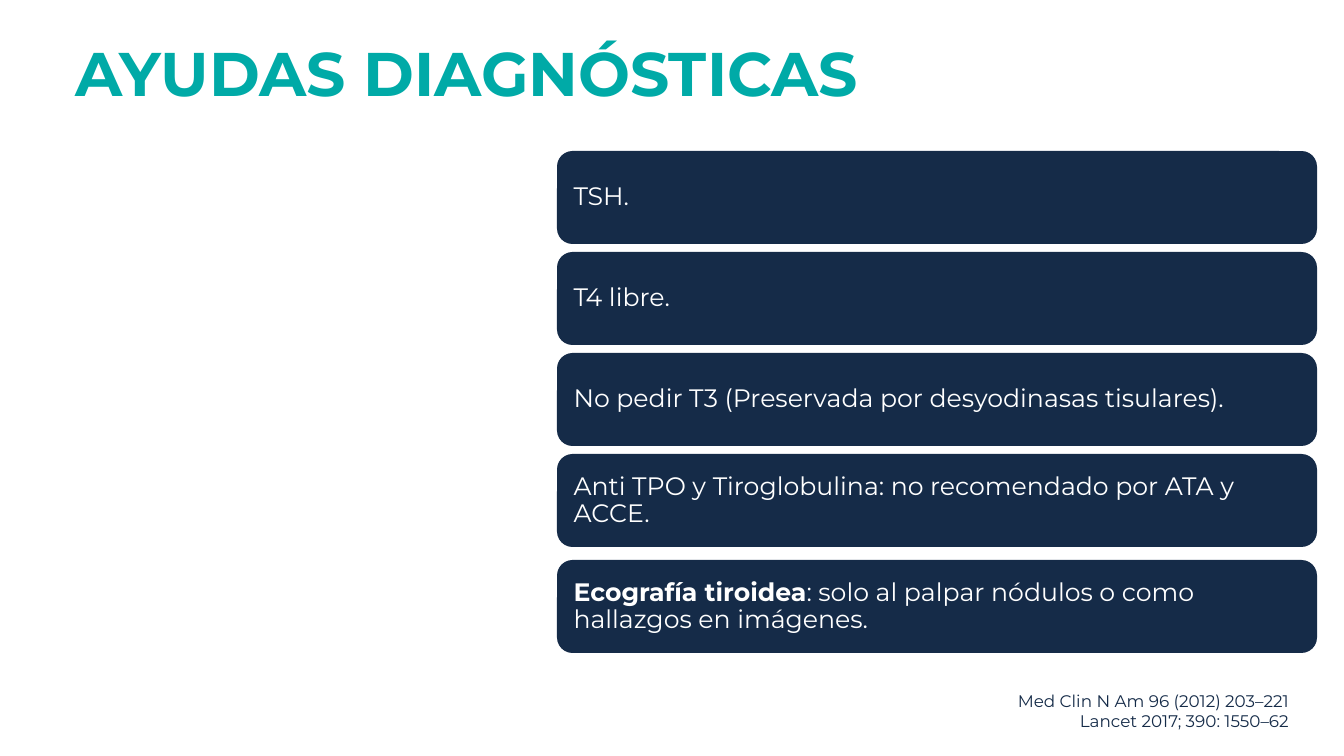
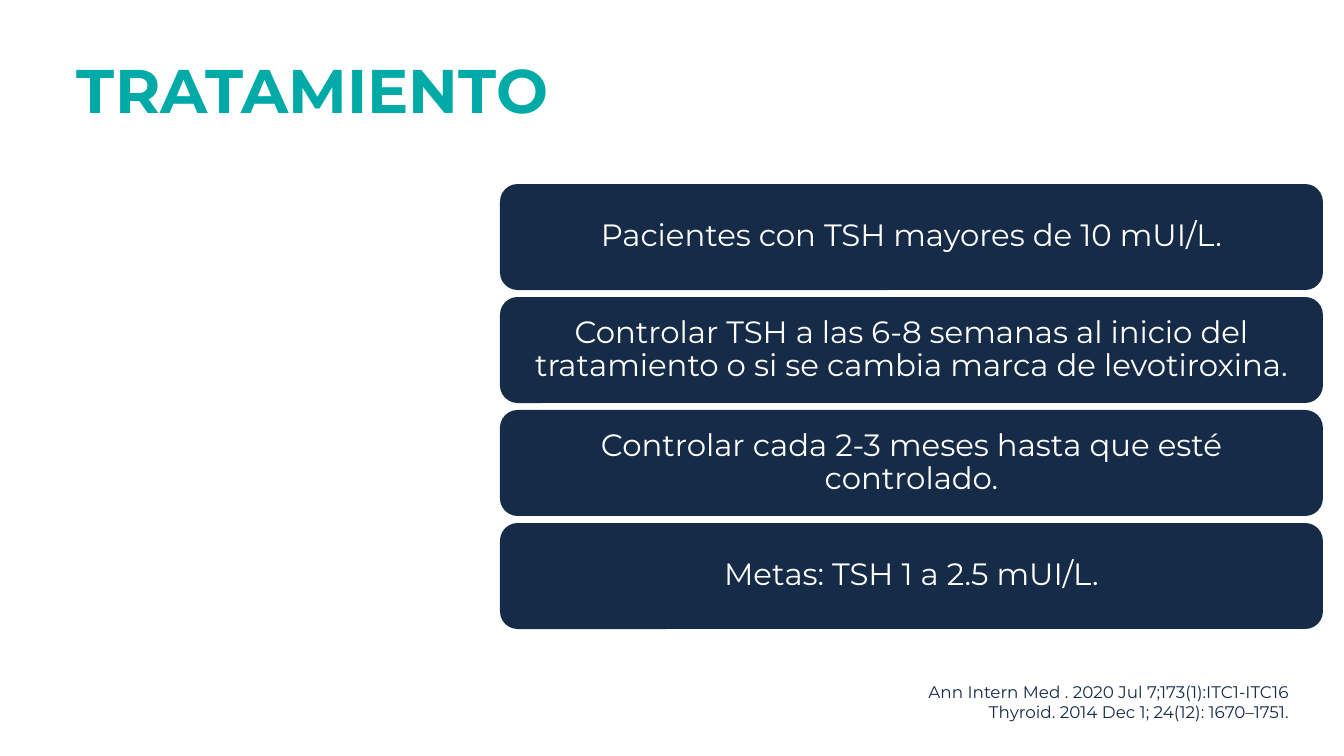
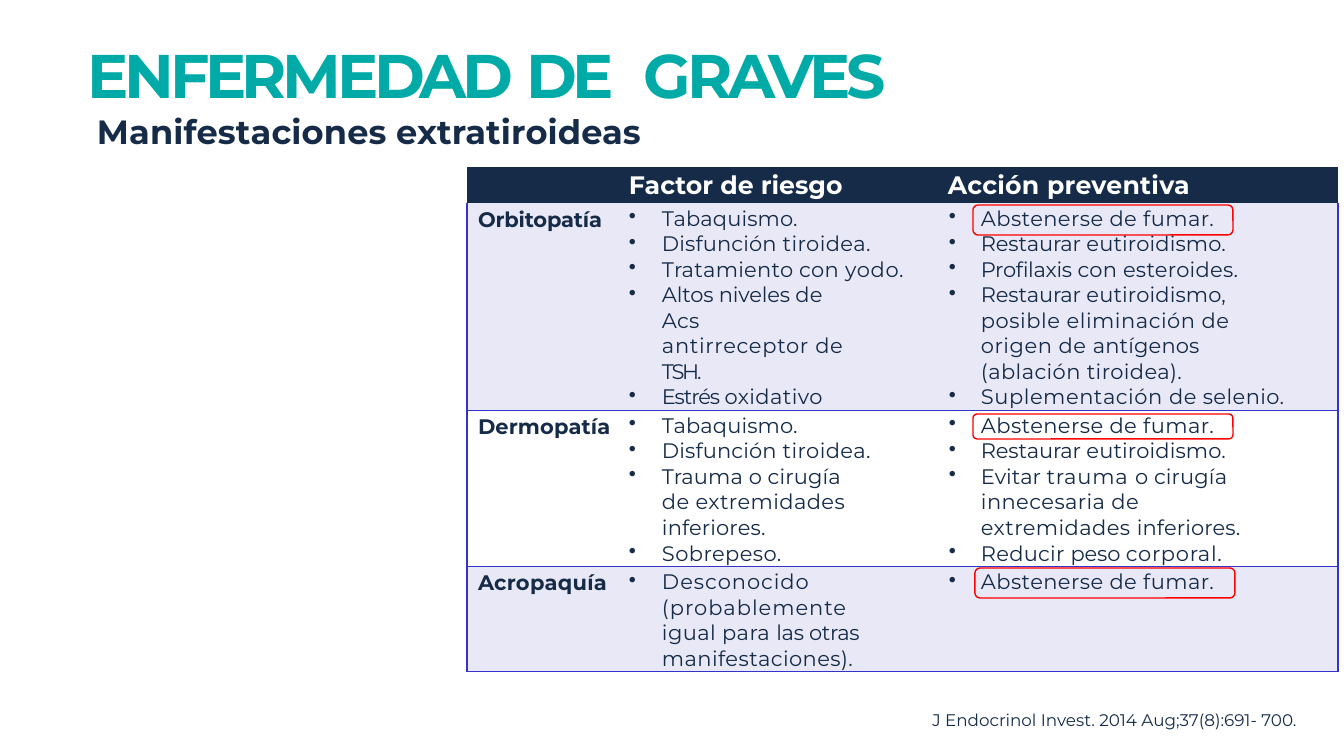
import copy

from pptx import Presentation
from pptx import util as u
from pptx.dml.color import RGBColor
from pptx.enum import shapes, text
from pptx.oxml import ns
from lxml import etree

EMU_PER_PX = 914400 / 100.8
FONT = "Montserrat"
TEAL = RGBColor(0x00, 0xAA, 0xA7)
NAVY = RGBColor(0x15, 0x2B, 0x48)
WHITE = RGBColor(0xFF, 0xFF, 0xFF)
LAVENDER = RGBColor(0xE8, 0xE8, 0xF6)
BLUE = RGBColor(0x33, 0x33, 0xCC)
RED = RGBColor(0xFF, 0x00, 0x00)
LEFT, CENTER, RIGHT = text.PP_ALIGN.LEFT, text.PP_ALIGN.CENTER, text.PP_ALIGN.RIGHT
NO_TABLE_STYLE = "{2D5ABB26-0587-4C30-8999-92F81FD0307C}"

HEADERS = [
    ("Factor de riesgo", 16, 0),
    ("Acción preventiva", 22, 0.2),
]
QUIT_SMOKING = [("Abstenerse de fumar.", 0.3)]
TOBACCO = [("Tabaquismo.", 0.1)]
DYSFUNCTION = [("Disfunción ", 0.1), ("tiroidea.", 0.3)]
EUTHYROIDISM = [("Restaurar ", -0.1), ("eutiroidismo.", 0.1)]
DISEASES = [
    ("Orbitopatía", -0.1, [
        TOBACCO,
        DYSFUNCTION,
        [("Tratamiento con ", 0.2), ("yodo.", 0.5)],
        [("Altos niveles ", -0.1), ("de\vAcs\v", 0.2),
         ("antirreceptor de\v", 0.5), ("TSH.", -1.6)],
        [("Estrés ", -0.8), ("oxidativo", 0.3)],
    ], [
        QUIT_SMOKING,
        EUTHYROIDISM,
        [("Profilaxis ", -0.2), ("con esteroides.", 0.2)],
        [("Restaurar ", -0.1), ("eutiroidismo,\v", 0.1),
         ("posible eliminación de\vorigen de ", 0.4),
         ("antígenos\v", 0.1), ("(ablación tiroidea).", 0.3)],
        [("Suplementación ", 0.4), ("de selenio.", 0.3)],
    ]),
    ("Dermopatía", 0.1, [
        TOBACCO,
        DYSFUNCTION,
        [("Trauma o cirugía\v", 0.1), ("de extremidades\v", 0.3),
         ("inferiores.", 0.1)],
        [("Sobrepeso.", 0.3)],
    ], [
        QUIT_SMOKING,
        EUTHYROIDISM,
        [("Evitar ", 0), ("trauma ", 0.6), ("o cirugía\v", 0.1),
         ("innecesaria de\vextremidades ", 0.3), ("inferiores.", 0.1)],
        [("Reducir ", 0.2), ("peso ", -0.1), ("corporal.", 0.5)],
    ]),
    ("Acropaquía", 0.2, [
        [("Desconocido\v(probablemente\v", 0.7), ("igual para ", 0.3),
         ("las otras\v", -0.2), ("manifestaciones).", 0.3)],
    ], [QUIT_SMOKING]),
]


def px(length):
    return round(length * EMU_PER_PX)


class Deck:
    def __init__(self):
        self.deck = Presentation()
        self.deck.slide_width, self.deck.slide_height = px(1344), px(756)
        self.slide = None

    def new_slide(self):
        self.slide = self.deck.slides.add_slide(self.deck.slide_layouts[5])

    def add_spans(self, para, spans, size, color, bold=False, align=LEFT):
        para.alignment = align
        for words, spacing in spans:
            for index, line in enumerate(words.split("\v")):
                if index:
                    para.add_line_break()
                if not line:
                    continue
                span = para.add_run()
                span.text = line
                span.font.name = FONT
                span.font.size = u.Pt(size)
                span.font.bold = bold
                span.font.color.rgb = color
                if spacing:
                    span._r.get_or_add_rPr().set("spc", str(round(spacing * 100)))
        style = para.runs[0]._r.get_or_add_rPr()
        for line_break in para._p.findall(ns.qn("a:br")):
            if line_break.find(ns.qn("a:rPr")) is None:
                line_break.insert(0, copy.deepcopy(style))

    def indent(self, para, margin, hanging=0, bullet=False):
        props = para._p.get_or_add_pPr()
        props.set("marL", str(px(margin)))
        props.set("indent", str(px(-hanging)))
        if bullet:
            etree.SubElement(props, ns.qn("a:buChar")).set("char", "•")

    def frame(self, owner, across, down, anchor):
        frame = owner.text_frame
        frame.word_wrap = True
        frame.auto_size = text.MSO_AUTO_SIZE.NONE
        frame.margin_left = frame.margin_right = px(across)
        frame.margin_top = frame.margin_bottom = px(down)
        frame.vertical_anchor = anchor
        return frame

    def place_title(self, left, top, width, height):
        title = self.slide.shapes.title
        title.left, title.top = px(left), px(top)
        title.width, title.height = px(width), px(height)
        return title

    def title(self, left, top, words):
        box = self.place_title(left, top, 1159, 146)
        para = self.frame(box, 10, 5, text.MSO_ANCHOR.MIDDLE).paragraphs[0]
        para.line_spacing = 0.9
        self.add_spans(para, [(words, 0)], 44, TEAL, True)

    def title_with_subtitle(self, spans, subtitle):
        box = self.place_title(88, 37, 855, 116)
        frame = self.frame(box, 0, 0, text.MSO_ANCHOR.TOP)
        self.add_spans(frame.paragraphs[0], spans, 44, TEAL, True)
        para = frame.add_paragraph()
        para.space_before = u.Pt(0)
        self.indent(para, 9)
        self.add_spans(para, [(subtitle, 0.1)], 24, NAVY, True)

    def rounded(self, left, top, width, height):
        box = self.slide.shapes.add_shape(
            shapes.MSO_SHAPE.ROUNDED_RECTANGLE,
            px(left), px(top), px(width), px(height))
        box.shadow.inherit = False
        return box

    def card(self, area, words, size, inset, align, lead=""):
        box = self.rounded(*area)
        box.fill.solid()
        box.fill.fore_color.rgb = NAVY
        box.line.fill.background()
        para = self.frame(box, inset, inset, text.MSO_ANCHOR.MIDDLE).paragraphs[0]
        para.line_spacing = 0.9
        if lead:
            self.add_spans(para, [(lead, 0)], size, WHITE, True, align)
        self.add_spans(para, [(words, 0)], size, WHITE, False, align)

    def highlight(self, left, top, height):
        box = self.rounded(left, top, 260, height)
        box.fill.background()
        box.line.color.rgb = RED
        box.line.width = u.Pt(1)

    def reference(self, right, top, lines):
        width = 595
        box = self.slide.shapes.add_textbox(
            px(right - width), px(top), px(width), px(10 + 20 * len(lines)))
        frame = self.frame(box, 10, 5, text.MSO_ANCHOR.TOP)
        for index, line in enumerate(lines):
            para = frame.add_paragraph() if index else frame.paragraphs[0]
            self.add_spans(para, [(line, 0)], 12, NAVY, align=RIGHT)

    def table(self, left, top, widths, heights):
        frame = self.slide.shapes.add_table(
            len(heights), len(widths), px(left), px(top),
            px(sum(widths)), px(sum(heights)))
        table = frame.table
        table.first_row = table.horz_banding = False
        table._tbl.tblPr.find(ns.qn("a:tableStyleId")).text = NO_TABLE_STYLE
        for column, width in zip(table.columns, widths):
            column.width = px(width)
        for row, height in zip(table.rows, heights):
            row.height = px(height)
        return table

    def cell(self, cell, fill, sides="", margin_top=3):
        cell.margin_left = cell.margin_right = cell.margin_bottom = 0
        cell.margin_top = px(margin_top)
        if fill is None:
            cell.fill.background()
        else:
            cell.fill.solid()
            cell.fill.fore_color.rgb = fill
        props = cell._tc.get_or_add_tcPr()
        for index, side in enumerate(sides):
            line = etree.Element(ns.qn("a:ln" + side), w=str(int(u.Pt(1))))
            paint = etree.SubElement(line, ns.qn("a:solidFill"))
            etree.SubElement(paint, ns.qn("a:srgbClr"), val=str(BLUE))
            props.insert(index, line)

    def bullets(self, cell, items, margin, hanging):
        frame = cell.text_frame
        for index, spans in enumerate(items):
            para = frame.add_paragraph() if index else frame.paragraphs[0]
            self.indent(para, margin, hanging, True)
            self.add_spans(para, spans, 15, NAVY)


def diagnostics(deck):
    deck.new_slide()
    deck.title(65, 4, "AYUDAS DIAGNÓSTICAS")
    cards = [
        (151, "", "TSH."),
        (252, "", "T4 libre."),
        (353, "", "No pedir T3 (Preservada por desyodinasas tisulares)."),
        (454, "", "Anti TPO y Tiroglobulina: no recomendado por ATA y ACCE."),
        (560, "Ecografía tiroidea",
         ": solo al palpar nódulos o como hallazgos en imágenes."),
    ]
    for top, lead, words in cards:
        deck.card((557, top, 760, 93), words, 18, 12, LEFT, lead)
    deck.reference(1299, 686, ["Med Clin N Am 96 (2012) 203–221",
                               "Lancet 2017; 390: 1550–62"])


def treatment(deck):
    deck.new_slide()
    deck.title(67, 21, "TRATAMIENTO")
    cards = [
        "Pacientes con TSH mayores de 10 mUI/L.",
        "Controlar TSH a las 6-8 semanas al inicio del tratamiento "
        "o si se cambia marca de levotiroxina.",
        "Controlar cada 2-3 meses hasta que esté controlado.",
        "Metas: TSH 1 a 2.5 mUI/L.",
    ]
    for index, words in enumerate(cards):
        deck.card((500, 184 + 113 * index, 823, 106), words, 22, 15, CENTER)
    deck.reference(1299, 677, ["Ann Intern Med . 2020 Jul 7;173(1):ITC1-ITC16",
                               "Thyroid. 2014 Dec 1; 24(12): 1670–1751."])


def graves(deck):
    deck.new_slide()
    deck.title_with_subtitle(
        [("ENFERMEDAD ", -3.2), ("DE", -3.7), (" ", 9), ("GRAVES", -3)],
        "Manifestaciones extratiroideas")
    table = deck.table(467, 167, [146, 313, 412], [36, 206, 156, 105])
    for column in range(3):
        deck.cell(table.cell(0, column), NAVY)
    for column, (words, margin, spacing) in enumerate(HEADERS, 1):
        para = table.cell(0, column).text_frame.paragraphs[0]
        deck.indent(para, margin)
        deck.add_spans(para, [(words, spacing)], 18, WHITE, True)
    for row, (name, spacing, risks, actions) in enumerate(DISEASES, 1):
        fill = LAVENDER if row % 2 else None
        disease, risk, action = table.rows[row].cells
        deck.cell(disease, fill, "LB", 4)
        deck.cell(risk, fill, "B")
        deck.cell(action, fill, "RB")
        para = disease.text_frame.paragraphs[0]
        deck.indent(para, 11)
        deck.add_spans(para, [(name, spacing)], 15, NAVY, True)
        deck.bullets(risk, risks, 49, 33)
        deck.bullets(action, actions, 55, 32)
    deck.reference(1307, 705, ["J Endocrinol Invest. 2014 Aug;37(8):691- 700."])
    for left, top, height in [(973, 205, 30), (973, 414, 25), (975, 568, 30)]:
        deck.highlight(left, top, height)


def main():
    deck = Deck()
    diagnostics(deck)
    treatment(deck)
    graves(deck)
    deck.deck.save("out.pptx")


if __name__ == "__main__":
    main()
